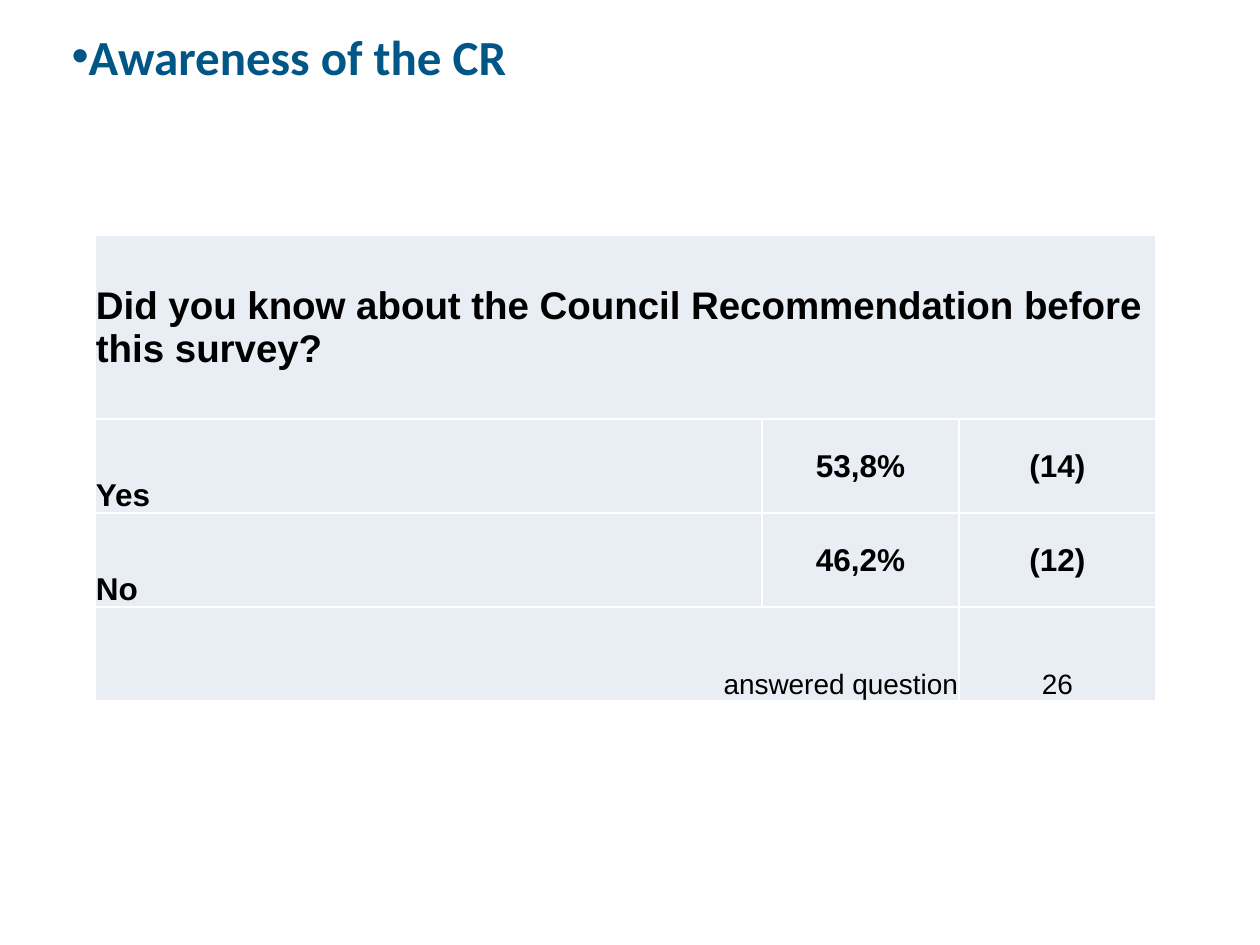
from lxml import etree
from pptx import Presentation
from pptx.dml.color import RGBColor
from pptx.enum.text import MSO_ANCHOR, PP_ALIGN
from pptx.oxml.ns import qn
from pptx.util import Pt

PX = 914400 // 126
TOP, MIDDLE, BOTTOM = MSO_ANCHOR.TOP, MSO_ANCHOR.MIDDLE, MSO_ANCHOR.BOTTOM
LEFT, CENTER, RIGHT = PP_ALIGN.LEFT, PP_ALIGN.CENTER, PP_ALIGN.RIGHT


def rgb(value):
    return RGBColor.from_string(value)


def write(frame, text, size=18, bold=True, font="Arial", color="000000",
          align=LEFT, bullet=None):
    paragraph = frame.paragraphs[0]
    paragraph.text = text
    paragraph.alignment = align
    paragraph.space_before = Pt(0)
    if bullet:
        properties = paragraph._p.get_or_add_pPr()
        properties.set("marL", "0")
        properties.set("indent", "0")
        etree.SubElement(properties, qn("a:buFont"), typeface="Arial")
        etree.SubElement(properties, qn("a:buChar"), char=bullet)
    run_font = paragraph.runs[0].font
    run_font.size, run_font.bold, run_font.name = Pt(size), bold, font
    run_font.color.rgb = rgb(color)


presentation = Presentation()
presentation.slide_width = 1260 * PX
presentation.slide_height = 945 * PX
slide = presentation.slides.add_slide(presentation.slide_layouts[1])

# Heading, set as a bulleted line in the body placeholder
unused_title = slide.shapes.title
unused_title.element.getparent().remove(unused_title.element)
heading = slide.placeholders[1]
heading.left, heading.top = 59 * PX, 20 * PX
heading.width, heading.height = 994 * PX, 79 * PX
heading.text_frame.vertical_anchor = TOP
write(heading.text_frame, "Awareness of the CR", size=28, font="Calibri",
      color="005686", bullet="•")

# Survey table
column_widths = [667, 197, 197]
row_heights = [184, 94, 94, 94]
survey = slide.shapes.add_table(
    len(row_heights), len(column_widths), 95 * PX, 235 * PX,
    sum(column_widths) * PX, sum(row_heights) * PX).table
survey.first_row = survey.horz_banding = False
for column, width in zip(survey.columns, column_widths):
    column.width = width * PX
for row, height in zip(survey.rows, row_heights):
    row.height = height * PX

# Cell margins, white borders and fill
for cell in survey.iter_cells():
    cell.margin_left = cell.margin_right = cell.margin_top = PX
    cell.margin_bottom = 0
    for side in ("a:lnL", "a:lnR", "a:lnT", "a:lnB"):
        border = etree.SubElement(cell._tc.get_or_add_tcPr(), qn(side), w=str(Pt(1)))
        line_fill = etree.SubElement(border, qn("a:solidFill"))
        etree.SubElement(line_fill, qn("a:srgbClr"), val="FFFFFF")
    cell.fill.solid()
    cell.fill.fore_color.rgb = rgb("E9EDF4")

# Question
question = survey.cell(0, 0)
question.merge(survey.cell(0, 2))
question.vertical_anchor = MIDDLE
write(question.text_frame,
      "Did you know about the Council Recommendation before this survey?", size=22)

# Answers with share and count
answers = [("Yes", "53,8%", "(14)"), ("No", "46,2%", "(12)")]
for row_number, answer in enumerate(answers, start=1):
    for column_number, text in enumerate(answer):
        cell = survey.cell(row_number, column_number)
        cell.vertical_anchor = MIDDLE if column_number else BOTTOM
        write(cell.text_frame, text, align=CENTER if column_number else LEFT)

# Total
survey.cell(3, 0).merge(survey.cell(3, 1))
for column_number, text, align in [(0, "answered question", RIGHT), (2, "26", CENTER)]:
    cell = survey.cell(3, column_number)
    cell.vertical_anchor = BOTTOM
    write(cell.text_frame, text, size=16, bold=False, align=align)

presentation.save("out.pptx")
